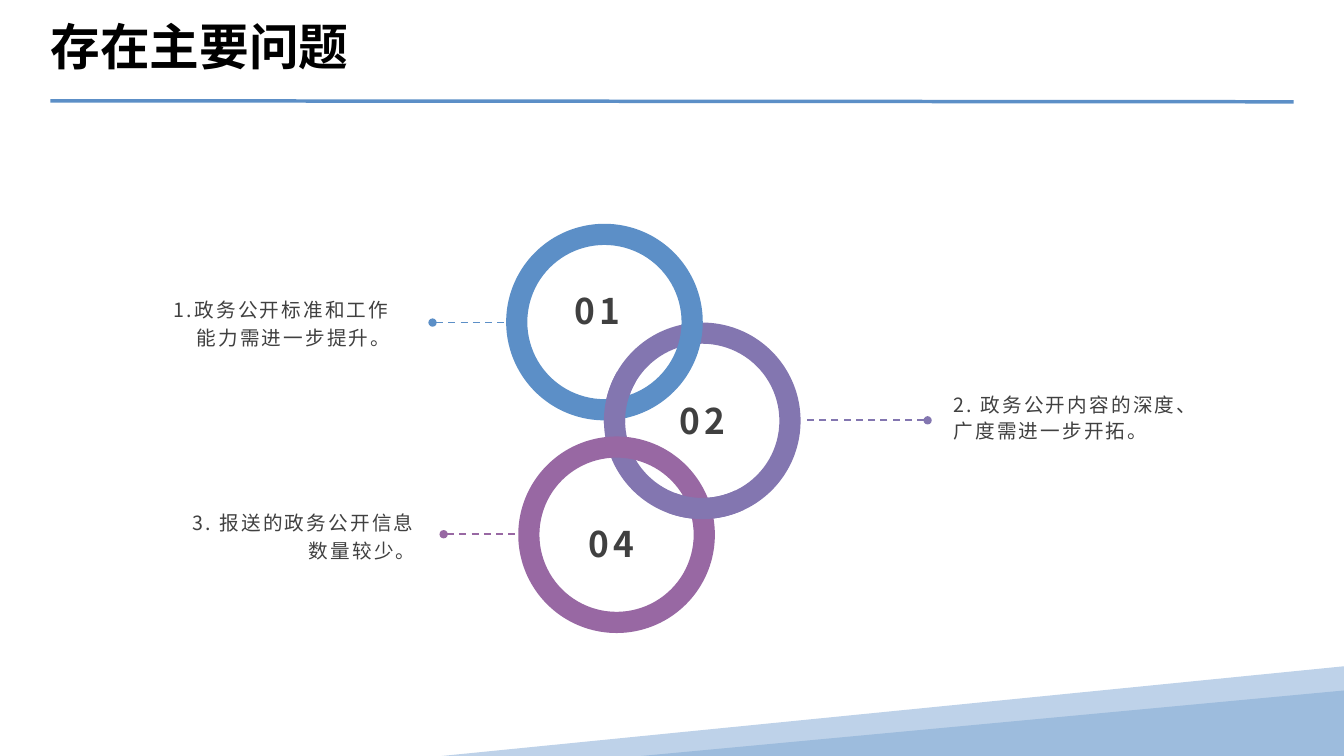
"""Build the slide on the main remaining problems, with three linked rings."""
from lxml.etree import SubElement
from pptx import Presentation
from pptx.dml.color import RGBColor
from pptx.enum.dml import MSO_LINE
from pptx.enum.shapes import MSO_CONNECTOR, MSO_SHAPE
from pptx.enum.text import MSO_ANCHOR, PP_ALIGN
from pptx.oxml.ns import qn
from pptx.util import Inches, Pt

FONT = "Noto Sans CJK SC"
BLACK = RGBColor(0x00, 0x00, 0x00)
GRAY = RGBColor(0x40, 0x40, 0x40)
BLUE = RGBColor(0x5C, 0x8F, 0xC7)
VIOLET = RGBColor(0x83, 0x76, 0xB0)
PLUM = RGBColor(0x98, 0x68, 0xA3)
PALE_BLUE = RGBColor(0xBE, 0xD2, 0xE9)
SOFT_BLUE = RGBColor(0x9D, 0xBC, 0xDD)
RING_SIZE = 1.95
BAND = 0.21 / RING_SIZE


def paint(shape, color):
    shape.shadow.inherit = False
    shape.fill.solid()
    shape.fill.fore_color.rgb = color
    shape.line.fill.background()


def add_preset(slide, kind, left, top, width, height, color, adjustments):
    shape = slide.shapes.add_shape(
        kind, Inches(left), Inches(top), Inches(width), Inches(height))
    for index, value in enumerate(adjustments):
        shape.adjustments[index] = value
    paint(shape, color)


def add_ring(slide, left, top, color):
    add_preset(slide, MSO_SHAPE.DONUT, left, top, RING_SIZE, RING_SIZE, color, [BAND])


def add_ring_arc(slide, left, top, color, start, end):
    angles = [degrees * 60000 / 100000 for degrees in (start, end)]
    add_preset(slide, MSO_SHAPE.BLOCK_ARC, left, top, RING_SIZE, RING_SIZE,
               color, angles + [BAND])


def add_line(slide, start, end, color, width):
    connector = slide.shapes.add_connector(
        MSO_CONNECTOR.STRAIGHT, *[Inches(value) for value in start + end])
    connector.line.color.rgb = color
    connector.line.width = Pt(width)
    SubElement(connector._element.spPr, qn("a:effectLst"))
    return connector


def add_leader(slide, dot, ring_edge, color):
    connector = add_line(slide, dot, ring_edge, color, 1.25)
    connector.line.dash_style = MSO_LINE.DASH
    SubElement(connector.line._get_or_add_ln(), qn("a:headEnd"), type="oval")


def format_text(shape, text, size, color, bold=False, spacing=0,
                alignment=PP_ALIGN.LEFT, line_spacing=1.0):
    frame = shape.text_frame
    frame.text = text
    frame.word_wrap = True
    paragraph = frame.paragraphs[0]
    paragraph.alignment = alignment
    paragraph.line_spacing = line_spacing
    font = paragraph.font
    font.name, font.size, font.bold = FONT, Pt(size), bold
    font.color.rgb = color
    font._element.set("spc", str(int(spacing * 100)))
    SubElement(font._element, qn("a:ea"), typeface=FONT)


def center_without_margins(frame):
    frame.vertical_anchor = MSO_ANCHOR.MIDDLE
    frame.margin_left = frame.margin_right = 0
    frame.margin_top = frame.margin_bottom = 0


def add_title(slide, text):
    title = slide.shapes.title
    title.left, title.top = Inches(0.5), Inches(0.17)
    title.width, title.height = Inches(12.33), Inches(0.67)
    format_text(title, text, 35.5, BLACK, bold=True, line_spacing=0.8)
    center_without_margins(title.text_frame)


def add_number(slide, left, top, text):
    box = slide.shapes.add_textbox(
        Inches(left), Inches(top), Inches(0.63), Inches(0.5))
    format_text(box, text, 25.2, GRAY, True, 3, PP_ALIGN.CENTER)
    center_without_margins(box.text_frame)


def add_problem(slide, left, top, text, alignment, line_spacing):
    box = slide.shapes.add_textbox(
        Inches(left), Inches(top), Inches(2.55), Inches(0.67))
    format_text(box, text, 14, GRAY, False, 1.5, alignment, line_spacing)


def add_corner(slide):
    points = [(Inches(x), Inches(y)) for x, y in
              [(13.33, 6.61), (13.33, 7.44), (8.97, 7.5), (4.38, 7.5)]]
    builder = slide.shapes.build_freeform(*points[0])
    builder.add_line_segments(points[1:], close=True)
    paint(builder.convert_to_shape(), PALE_BLUE)
    add_preset(slide, MSO_SHAPE.ISOSCELES_TRIANGLE, 6.36, 6.85, 6.97, 0.65,
               SOFT_BLUE, [1])


def main():
    presentation = Presentation()
    presentation.slide_width = Inches(13.33)
    presentation.slide_height = Inches(7.5)
    slide = presentation.slides.add_slide(presentation.slide_layouts[5])

    add_corner(slide)
    add_line(slide, (0.5, 1), (12.83, 1.01), BLUE, 2.5)
    add_title(slide, "存在主要问题")

    violet_ring = (5.99, 3.2)
    add_ring(slide, *violet_ring, VIOLET)
    add_ring(slide, 5.02, 2.22, BLUE)
    add_ring(slide, 5.14, 4.33, PLUM)
    for start, end in [(178, 210), (65, 110)]:
        add_ring_arc(slide, *violet_ring, VIOLET, start, end)

    add_leader(slide, (4.4, 5.3), (5.14, 5.3), PLUM)
    add_leader(slide, (4.29, 3.2), (5.02, 3.2), BLUE)
    add_leader(slide, (9.2, 4.17), (7.96, 4.17), VIOLET)

    add_number(slide, 5.61, 2.83, "01")
    add_number(slide, 6.65, 3.92, "02")
    add_number(slide, 5.75, 5.14, "04")

    add_problem(slide, 9.36, 3.83, "2. 政务公开内容的深度、广度需进一步开拓。",
                PP_ALIGN.LEFT, 1.1)
    add_problem(slide, 1.67, 4.97, "3. 报送的政务公开信息数量较少。",
                PP_ALIGN.RIGHT, 1.2)
    add_problem(slide, 1.42, 2.86, "1.政务公开标准和工作能力需进一步提升。",
                PP_ALIGN.RIGHT, 1.2)

    presentation.save("out.pptx")


if __name__ == "__main__":
    main()
